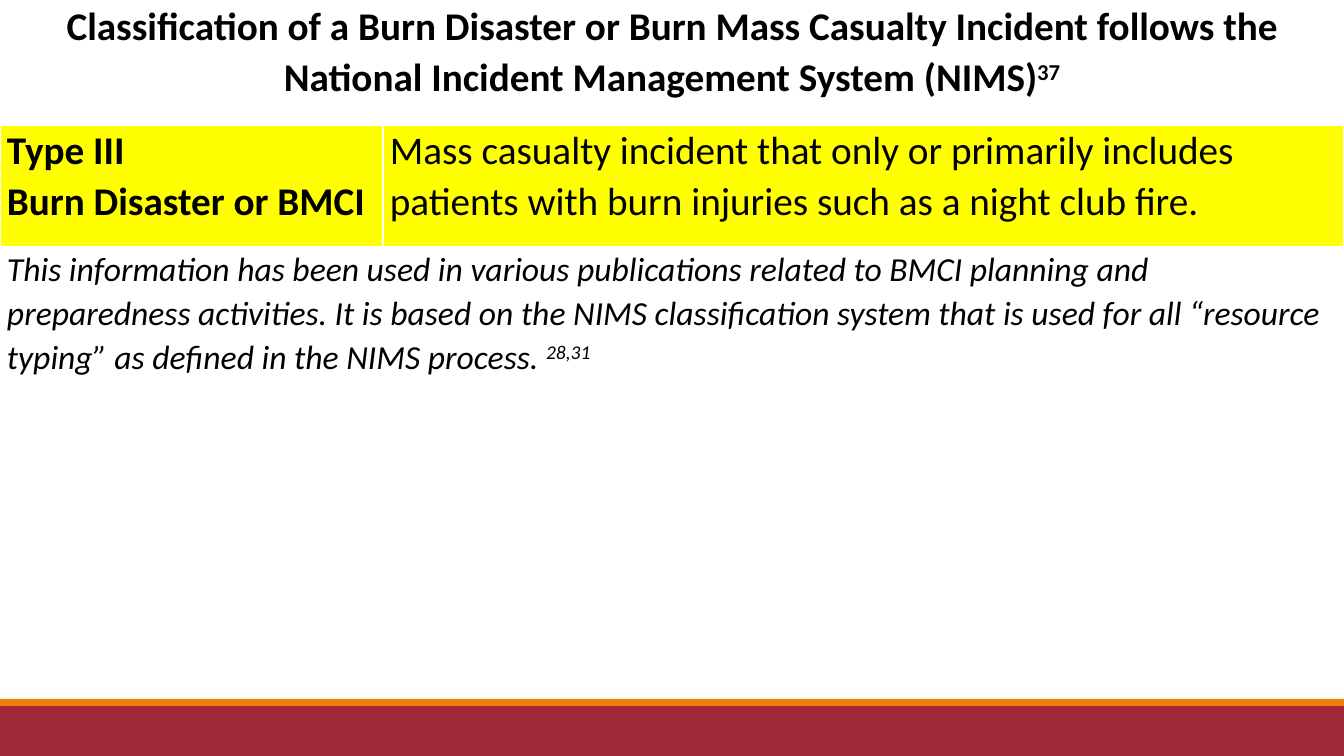
from lxml import etree
from pptx import Presentation, util as u
from pptx.dml.color import RGBColor
from pptx.enum import shapes, text
from pptx.oxml.ns import qn

WIDE, HIGH = 1344, 756
WHITE, YELLOW, BLACK = "FFFFFF", "FFFF00", "000000"


def px(n):
    return u.Emu(round(n * 914400 / 100.8))


def paint(fill, tone):
    fill.solid()
    fill.fore_color.rgb = RGBColor.from_string(tone)


def bar(slide, top, high, tone):
    """Draw a full-width footer band."""
    box = slide.shapes.add_shape(
        shapes.MSO_SHAPE.RECTANGLE, 0, px(top), px(WIDE), px(high))
    box.shadow.inherit = False
    paint(box.fill, tone)
    box.line.fill.background()


def footer(slide, top, high):
    rim = 7
    bar(slide, top + rim, high - rim, "9F2936")
    bar(slide, top, rim, "F07F09")


def write(cell, paras, size, bold=False, slant=False, align=text.PP_ALIGN.LEFT):
    """Fill a cell with paragraphs, each a list of (words, raised) runs."""
    cell.margin_left = cell.margin_right = px(7)
    cell.margin_top = cell.margin_bottom = 0
    frame = cell.text_frame
    for i, runs in enumerate(paras):
        para = frame.add_paragraph() if i else frame.paragraphs[0]
        para.alignment, para.line_spacing = align, 1.07
        for words, raised in runs:
            run = para.add_run()
            run.text = words
            font = run.font
            font.name, font.size = "Calibri", u.Pt(size)
            font.bold, font.italic = bold, slant
            paint(font.fill, BLACK)
            if raised:
                run._r.get_or_add_rPr().set("baseline", "30000")


def edge(cell, top, base):
    """Give a cell white borders, with top and base widths in points."""
    props = cell._tc.get_or_add_tcPr()
    for i, (side, wide) in enumerate(zip("LRTB", (1, 1, top, base))):
        line = etree.Element(qn("a:ln" + side), w=str(u.Pt(wide)))
        fill = etree.SubElement(line, qn("a:solidFill"))
        etree.SubElement(fill, qn("a:srgbClr"), val=WHITE)
        props.insert(i, line)


def grid(slide, left, top, wide, high):
    cols, rows = (383, wide - 383), (124, 123, high - 247)
    table = slide.shapes.add_table(
        len(rows), len(cols), px(left), px(top), px(wide), px(high)).table
    for col, span in zip(table.columns, cols):
        col.width = px(span)
    for i, tall in enumerate(rows):
        table.rows[i].height = px(tall)
        for cell in table.rows[i].cells:
            paint(cell.fill, YELLOW if i == 1 else WHITE)
            edge(cell, 3 if i == 1 else 1, 3 if i == 0 else 1)
    for i in (0, 2):
        table.cell(i, 0).merge(table.cell(i, 1))

    write(table.cell(0, 0), [[
        ("Classification of a Burn Disaster or Burn Mass Casualty Incident "
         "follows the National Incident Management System (NIMS)", False),
        ("37", True)]], 28, bold=True, align=text.PP_ALIGN.CENTER)
    write(table.cell(1, 0), [
        [("Type III", False)], [("Burn Disaster or BMCI", False)]], 28, bold=True)
    write(table.cell(1, 1), [[
        ("Mass casualty incident that only or primarily includes patients "
         "with burn injuries such as a night club fire.", False)]], 28)
    write(table.cell(2, 0), [[
        ("This information has been used in various publications related to "
         "BMCI planning and preparedness activities. It is based on the NIMS "
         "classification system that is used for all “resource typing” as "
         "defined in the NIMS process. ", False),
        ("28,31", True)]], 24, slant=True)


def main():
    deck = Presentation()
    deck.slide_width, deck.slide_height = px(WIDE), px(HIGH)
    slide = deck.slides.add_slide(deck.slide_layouts[6])
    paint(slide.background.fill, WHITE)
    footer(slide, 699, HIGH - 699)
    grid(slide, 0, 0, WIDE, 416)
    deck.save("out.pptx")


if __name__ == "__main__":
    main()
